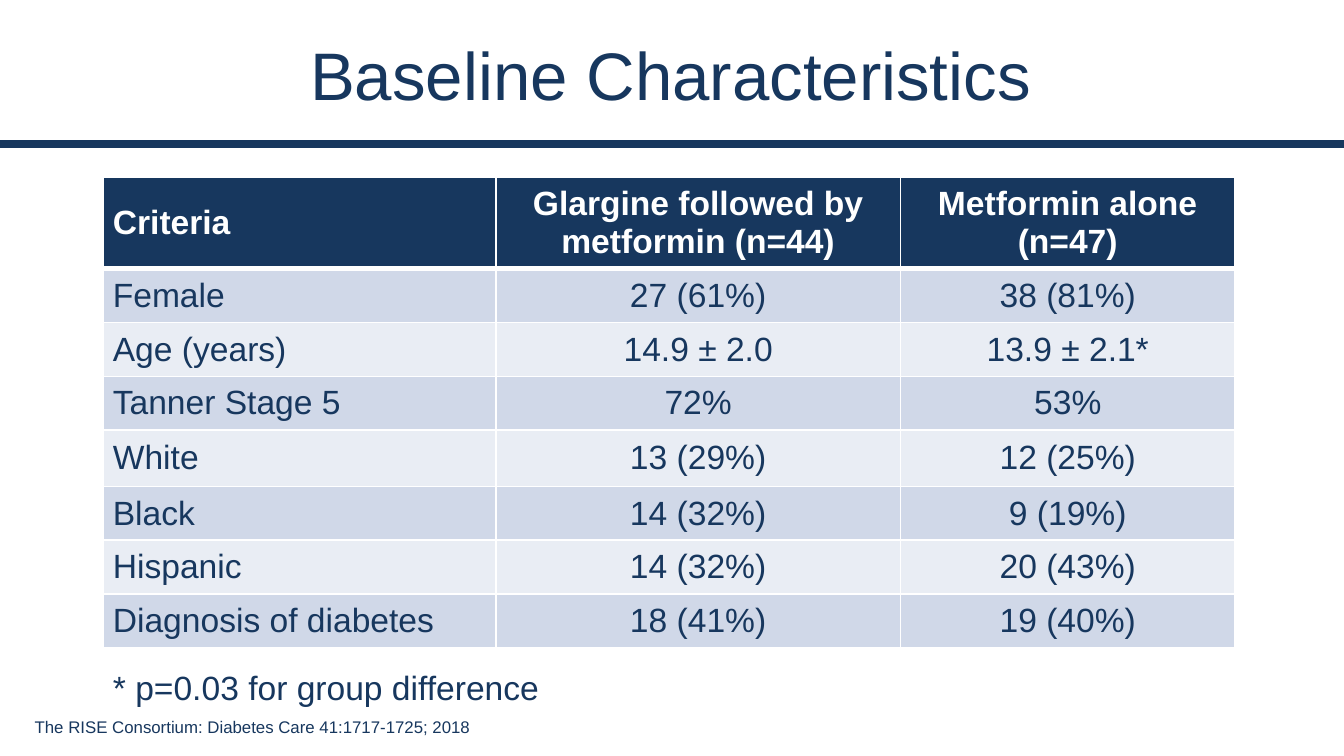
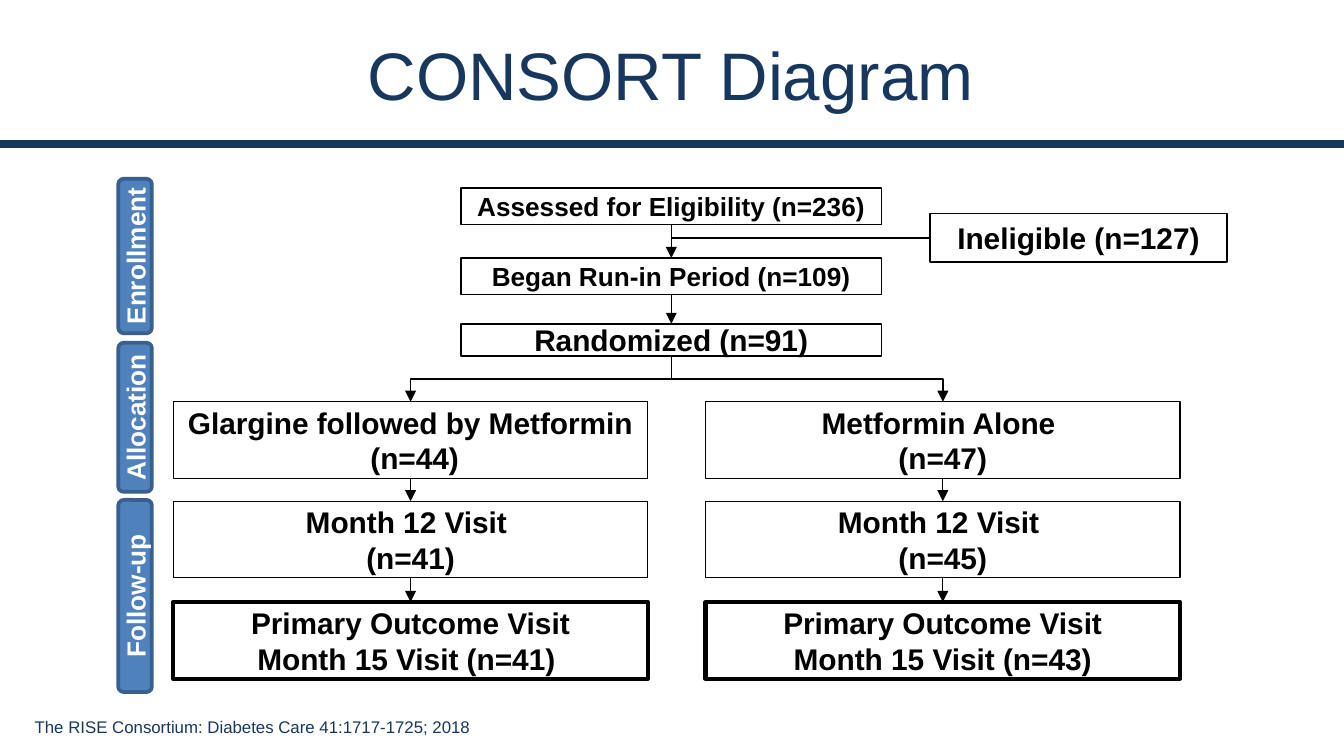
import pptx
import pptx.util
import pptx.dml.color
import pptx.enum.shapes
import pptx.enum.text
import pptx.oxml
import pptx.oxml.ns

Inches = pptx.util.Inches
Pt = pptx.util.Pt
SHAPE = pptx.enum.shapes.MSO_SHAPE
CONNECTOR = pptx.enum.shapes.MSO_CONNECTOR
ALIGN = pptx.enum.text.PP_ALIGN
ANCHOR = pptx.enum.text.MSO_ANCHOR
TOP, LEFT, BOTTOM = 0, 1, 2

COLORS = {
    "navy": "17375E",
    "white": "FFFFFF",
    "black": "000000",
    "phase": "4F81BD",
    "phase_edge": "3A5F8C",
    "odd_row": "D0D8E8",
    "even_row": "E9EDF4",
}
FONT = "Arial"
SLIDE_SIZE = (10, 10 * 9 / 16)
TITLE_AREA = (0.12, 0.08, 9.74, 0.94)
RULE_TOP = 1.07
SOURCE = "The RISE Consortium: Diabetes Care 41:1717-1725; 2018"
SOURCE_AREA = (0.16, 5.28, 3.5, 0.25)
WIDE_INSETS = (0.1, 0.05)
SLIM_INSETS = (0.07, 0.04)

CRITERIA_TITLE = "Baseline Characteristics"
CRITERIA = [
    ("Criteria", "Glargine followed by metformin (n=44)", "Metformin alone\n(n=47)"),
    ("Female", "27 (61%)", "38 (81%)"),
    ("Age (years)", "14.9 ± 2.0", "13.9 ± 2.1*"),
    ("Tanner Stage 5", "72%", "53%"),
    ("White", "13 (29%)", "12 (25%)"),
    ("Black", "14 (32%)", "9 (19%)"),
    ("Hispanic", "14 (32%)", "20 (43%)"),
    ("Diagnosis of diabetes", "18 (41%)", "19 (40%)"),
]
CRITERIA_AREA = (0.77, 1.32, 8.42, 3.5)
CRITERIA_WIDTHS = (2.92, 3.01, 2.49)
CRITERIA_HEIGHTS = (0.67, 0.4, 0.4, 0.4, 0.42, 0.4, 0.4, 0.4)
P_VALUE = "* p=0.03 for group difference"
P_VALUE_AREA = (0.77, 4.92, 3.35, 0.38)

FLOW_TITLE = "CONSORT Diagram"
PHASE_LEFT, PHASE_WIDTH = 0.88, 0.25
PHASES = [("Enrollment", 1.33, 1.15), ("Allocation", 2.55, 1.11), ("Follow-up", 3.72, 1.43)]
TRUNK_LEFT, TRUNK_WIDTH = 3.43, 3.13
TRUNK = [
    ("Assessed for Eligibility (n=236)", 1.4, 0.27, 14),
    ("Began Run-in Period (n=109)", 1.92, 0.27, 14),
    ("Randomized (n=91)", 2.41, 0.24, 16),
]
INELIGIBLE = "Ineligible (n=127)"
INELIGIBLE_AREA = (6.92, 1.59, 2.21, 0.36)
ARM_WIDTH, ARM_HEIGHT = 3.53, 0.57
ARM_STAGES = [(2.99, 0.75), (3.73, 0.75), (4.48, 2.25)]
ARMS = [
    (1.29, ["Glargine followed by Metformin\n (n=44)", "Month 12 Visit \n(n=41)",
            "Primary Outcome Visit\nMonth 15 Visit (n=41) "]),
    (5.25, ["Metformin Alone \n(n=47)", "Month 12 Visit \n(n=45)",
            "Primary Outcome Visit\nMonth 15 Visit (n=43)"]),
]


def rgb(color):
    return pptx.dml.color.RGBColor.from_string(COLORS[color])


def assign(target, values):
    for key, value in values.items():
        setattr(target, key, value)


def write(frame, text, size, color, bold=False, align=ALIGN.CENTER):
    frame.text = text
    for paragraph in frame.paragraphs:
        paragraph.alignment = align
        for run in paragraph.runs:
            assign(run.font, {"name": FONT, "size": Pt(size), "bold": bold})
            run.font.color.rgb = rgb(color)


def margins(target, insets):
    side, end = map(Inches, insets)
    assign(target, {"margin_left": side, "margin_right": side,
                    "margin_top": end, "margin_bottom": end})


def add_text(slide, area, text, size, insets, align=ALIGN.LEFT, wrap=False, anchor=ANCHOR.TOP):
    frame = slide.shapes.add_textbox(*map(Inches, area)).text_frame
    assign(frame, {"word_wrap": wrap, "vertical_anchor": anchor})
    margins(frame, insets)
    write(frame, text, size, "navy", align=align)


def add_box(slide, area, text, size, weight=0.75, kind=SHAPE.RECTANGLE,
            fill="white", edge="black", ink="black"):
    box = slide.shapes.add_shape(kind, *map(Inches, area))
    box.shadow.inherit = False
    box.fill.solid()
    box.fill.fore_color.rgb = rgb(fill)
    box.line.color.rgb = rgb(edge)
    box.line.width = Pt(weight)
    assign(box.text_frame, {"word_wrap": True, "vertical_anchor": ANCHOR.MIDDLE})
    margins(box.text_frame, WIDE_INSETS)
    write(box.text_frame, text, size, ink, bold=True)
    return box


def element(tag, attributes="", inner=""):
    return pptx.oxml.parse_xml(
        f'<a:{tag} {pptx.oxml.ns.nsdecls("a")} {attributes}>{inner}</a:{tag}>')


def add_line(slide, start=(0, 0), end=(0, 0), kind=CONNECTOR.STRAIGHT,
             color="black", weight=0.75, arrow=False):
    line = slide.shapes.add_connector(kind, *map(Inches, start + end))
    line.line.color.rgb = rgb(color)
    line.line.width = Pt(weight)
    properties = line._element.spPr
    if arrow:
        properties.find(pptx.oxml.ns.qn("a:ln")).append(element("tailEnd", 'type="triangle"'))
    properties.append(element("effectLst"))
    return line


def join(slide, upper, lower, kind=CONNECTOR.STRAIGHT):
    arrow = add_line(slide, kind=kind, arrow=True)
    arrow.begin_connect(upper, BOTTOM)
    arrow.end_connect(lower, TOP)
    return arrow


def branch(slide, upper, lower):
    arrow = join(slide, upper, lower, CONNECTOR.ELBOW)
    start_x = upper.left + upper.width // 2
    end_x = lower.left + lower.width // 2
    start_y = upper.top + upper.height
    drop, span = lower.top - start_y, abs(end_x - start_x)
    assign(arrow, {"left": (start_x + end_x - drop) // 2,
                   "top": (start_y + lower.top - span) // 2,
                   "width": drop, "height": span})
    rightward = end_x > start_x
    turn = arrow._element.spPr.find(pptx.oxml.ns.qn("a:xfrm"))
    turn.set("rot", str((270 if rightward else 90) * 60000))
    turn.set("flipH", "1" if rightward else "0")
    turn.set("flipV", "0")


def add_borders(cell, header, first_body):
    weights = {"lnL": 1, "lnR": 1, "lnT": 3 if first_body else 1, "lnB": 3 if header else 1}
    ink = f'<a:solidFill><a:srgbClr val="{COLORS["white"]}"/></a:solidFill>'
    for place, (side, weight) in enumerate(weights.items()):
        cell._tc.get_or_add_tcPr().insert(place, element(side, f'w="{Pt(weight)}"', ink))


def add_slide(deck, title):
    slide = deck.slides.add_slide(deck.slide_layouts[6])
    add_line(slide, (0, RULE_TOP), (SLIDE_SIZE[0], RULE_TOP), color="navy", weight=4.5)
    add_text(slide, TITLE_AREA, title, 36, SLIM_INSETS, ALIGN.CENTER, True, ANCHOR.MIDDLE)
    add_text(slide, SOURCE_AREA, SOURCE, 9, WIDE_INSETS)
    return slide


def build_criteria(deck):
    slide = add_slide(deck, CRITERIA_TITLE)
    table = slide.shapes.add_table(len(CRITERIA), len(CRITERIA_WIDTHS),
                                   *map(Inches, CRITERIA_AREA)).table
    for column, width in zip(table.columns, CRITERIA_WIDTHS):
        column.width = Inches(width)
    for r, (values, height) in enumerate(zip(CRITERIA, CRITERIA_HEIGHTS)):
        table.rows[r].height = Inches(height)
        header = r == 0
        fill = "navy" if header else "odd_row" if r % 2 else "even_row"
        for c, value in enumerate(values):
            cell = table.cell(r, c)
            cell.fill.solid()
            cell.fill.fore_color.rgb = rgb(fill)
            cell.vertical_anchor = ANCHOR.MIDDLE
            margins(cell, SLIM_INSETS)
            add_borders(cell, header, r == 1)
            write(cell.text_frame, value, 18, "white" if header else "navy", header,
                  ALIGN.CENTER if c else ALIGN.LEFT)
    add_text(slide, P_VALUE_AREA, P_VALUE, 18, SLIM_INSETS)


def build_flow(deck):
    slide = add_slide(deck, FLOW_TITLE)
    for phase, top, height in PHASES:
        bar = add_box(slide, (PHASE_LEFT, top, PHASE_WIDTH, height), phase, 14, 2,
                      SHAPE.ROUNDED_RECTANGLE, "phase", "phase_edge", "white")
        bar.text_frame.word_wrap = False
        bar.text_frame._txBody.bodyPr.set("vert", "vert270")

    trunk = [add_box(slide, (TRUNK_LEFT, top, TRUNK_WIDTH, height), step, size)
             for step, top, height, size in TRUNK]
    for upper, lower in zip(trunk, trunk[1:]):
        join(slide, upper, lower)

    ineligible = add_box(slide, INELIGIBLE_AREA, INELIGIBLE, 16)
    middle = INELIGIBLE_AREA[1] + INELIGIBLE_AREA[3] / 2
    exclusion = add_line(slide, (TRUNK_LEFT + TRUNK_WIDTH / 2, middle),
                         (INELIGIBLE_AREA[0], middle))
    exclusion.end_connect(ineligible, LEFT)

    for left, visits in ARMS:
        arm = [add_box(slide, (left, top, ARM_WIDTH, ARM_HEIGHT), visit, 16, weight)
               for visit, (top, weight) in zip(visits, ARM_STAGES)]
        branch(slide, trunk[-1], arm[0])
        for upper, lower in zip(arm, arm[1:]):
            join(slide, upper, lower)


def main():
    deck = pptx.Presentation()
    deck.slide_width, deck.slide_height = map(Inches, SLIDE_SIZE)
    build_criteria(deck)
    build_flow(deck)
    deck.save("out.pptx")


if __name__ == "__main__":
    main()
